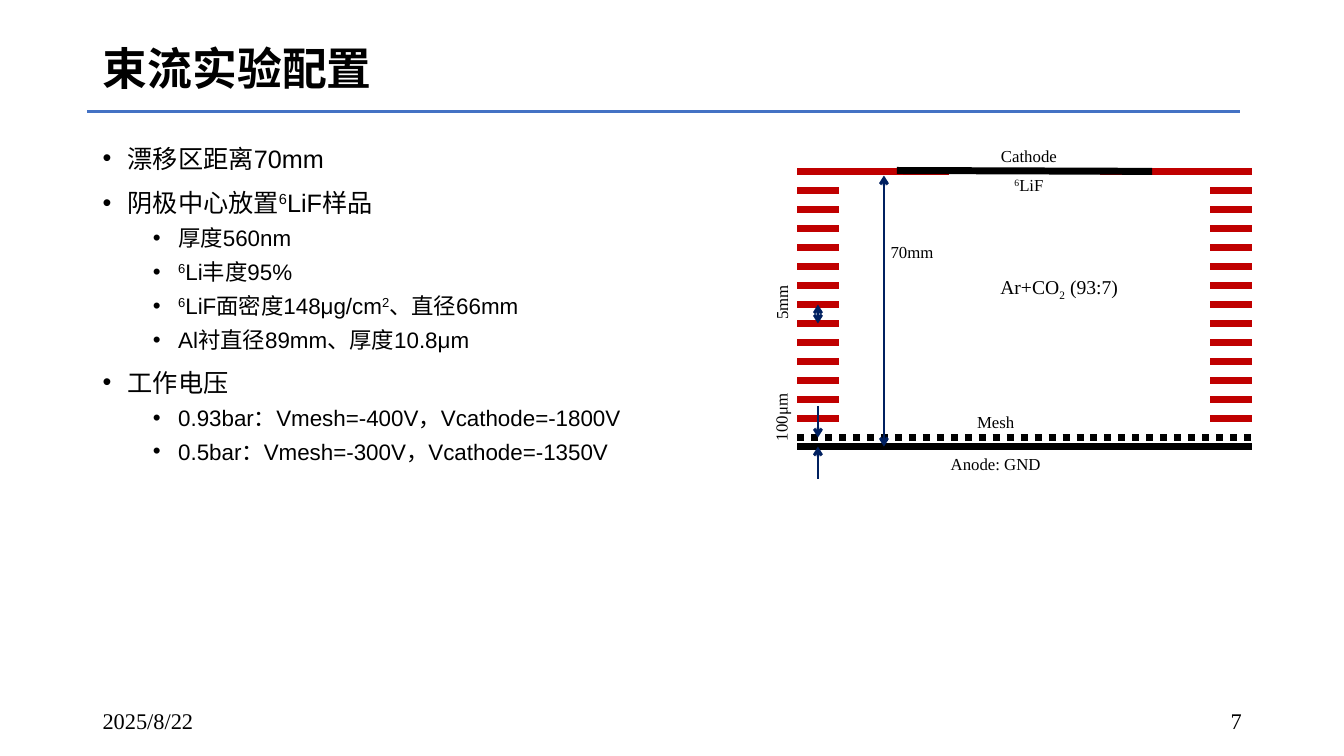
from pptx import Presentation
from pptx import util as u
from pptx.dml import color
from pptx.enum import dml, shapes, text
from pptx.oxml import ns, xmlchemy

Pt = u.Pt
BLACK = color.RGBColor(0x00, 0x00, 0x00)
BLUE = color.RGBColor(0x44, 0x72, 0xC4)
RED = color.RGBColor(0xC0, 0x00, 0x00)
NAVY = color.RGBColor(0x00, 0x20, 0x60)

SANS, SERIF, CJK = "Arial", "Times New Roman", "Noto Sans CJK JP"
LEFT, CENTER, RIGHT = text.PP_ALIGN.LEFT, text.PP_ALIGN.CENTER, text.PP_ALIGN.RIGHT
SUPER, SUB = 30000, -25000

BULLETS = [
    (0, ["漂移区距离70mm"]),
    (0, ["阴极中心放置", ("6", SUPER), "LiF样品"]),
    (1, ["厚度560nm"]),
    (1, [("6", SUPER), "Li丰度95%"]),
    (1, [("6", SUPER), "LiF面密度148μg/cm", ("2", SUPER), "、直径66mm"]),
    (1, ["Al衬直径89mm、厚度10.8μm"]),
    (0, ["工作电压"]),
    (1, ["0.93bar：Vmesh=-400V，Vcathode=-1800V"]),
    (1, ["0.5bar：Vmesh=-300V，Vcathode=-1350V"]),
]
LEVELS = [dict(size=18, indent=18, before=10), dict(size=16, indent=54, before=5)]


def set_all(target, values):
    for name, value in values.items():
        setattr(target, name, value)


def add_runs(p, parts, font, size, bold=False):
    for part in parts:
        words, baseline = part if isinstance(part, tuple) else (part, 0)
        r = p.add_run()
        r.text = words
        set_all(r.font, dict(name=font, size=Pt(size), bold=bold))
        r.font.color.rgb = BLACK
        rPr = r._r.get_or_add_rPr()
        ea = xmlchemy.OxmlElement("a:ea")
        ea.set("typeface", font)
        rPr.append(ea)
        if baseline:
            rPr.set("baseline", str(baseline))


def add_label(parent, box, parts, size, align=CENTER, anchor=text.MSO_ANCHOR.TOP, rotation=0):
    sp = parent.add_textbox(*map(Pt, box))
    sp.rotation = rotation
    set_all(sp.text_frame, dict(word_wrap=True, vertical_anchor=anchor))
    p = sp.text_frame.paragraphs[0]
    p.alignment = align
    add_runs(p, parts, SERIF, size)


def add_line(parent, start, end, rgb, width, arrows=(), dash=None):
    line = parent.add_connector(shapes.MSO_CONNECTOR.STRAIGHT, *map(Pt, (*start, *end)))
    line.line.color.rgb = rgb
    set_all(line.line, dict(width=Pt(width), dash_style=dash))
    ln = line.line._get_or_add_ln()
    for tag in arrows:
        arrow = xmlchemy.OxmlElement(tag)
        arrow.set("type", "arrow")
        ln.append(arrow)
    line._element.spPr.append(xmlchemy.OxmlElement("a:effectLst"))


def add_heading(s, left, top, width, height):
    title = s.shapes.title
    set_all(title, dict(left=Pt(left), top=Pt(top), width=Pt(width), height=Pt(height)))
    tf = title.text_frame
    set_all(tf, dict(word_wrap=True, auto_size=text.MSO_AUTO_SIZE.NONE,
                     vertical_anchor=text.MSO_ANCHOR.MIDDLE))
    p = tf.paragraphs[0]
    set_all(p, dict(alignment=LEFT, line_spacing=0.9))
    add_runs(p, ["束流实验配置"], CJK, 32, bold=True)
    rule_y = top + height + 7.2
    add_line(s.shapes, (left - 4.2, rule_y), (left + 819.4, rule_y), BLUE, 2.25)


def add_bullets(s, left, top, width, height):
    tf = s.shapes.add_textbox(*map(Pt, (left, top, width, height))).text_frame
    tf.word_wrap = True
    for i, (level, parts) in enumerate(BULLETS):
        style = LEVELS[level]
        p = tf.paragraphs[0] if i == 0 else tf.add_paragraph()
        set_all(p, dict(level=level, space_before=Pt(style["before"] if i else 0)))
        pPr = p._p.get_or_add_pPr()
        pPr.set("marL", str(Pt(style["indent"])))
        pPr.set("indent", str(Pt(-18)))
        for tag, key, value in (("a:buFont", "typeface", SANS), ("a:buChar", "char", "•")):
            bullet = xmlchemy.OxmlElement(tag)
            bullet.set(key, value)
            pPr.append(bullet)
        add_runs(p, parts, SANS, style["size"])


def add_detector(s, left, top, width, height):
    group = s.shapes.add_group_shape().shapes
    right, anode = left + width, top + height
    mesh = anode - 6.5
    head, tail = "a:headEnd", "a:tailEnd"

    add_line(group, (left, anode), (right, anode), BLACK, 5)
    add_line(group, (left, mesh), (right, mesh), BLACK, 5, dash=dml.MSO_LINE.ROUND_DOT)

    ring_width, pitch = 29.7, 13.57
    rings = [top + 13.7 + i * pitch for i in range(13)]
    for y in rings:
        for x in (left, right - ring_width):
            add_line(group, (x, y), (x + ring_width, y), RED, 5)
    for x in (left, right - 108.2):
        add_line(group, (x, top), (x + 108.2, top), RED, 5)
    add_line(group, (left + 71.3, top - 0.6), (left + 253.5, top), BLACK, 5)

    gap_x, drift_x = left + ring_width / 2, left + 62
    add_line(group, (gap_x, anode + 23), (gap_x, anode), NAVY, 2, [tail])
    add_line(group, (gap_x, mesh - 22.5), (gap_x, mesh), NAVY, 2, [tail])
    add_line(group, (gap_x, rings[7]), (gap_x, rings[6]), NAVY, 2, [head, tail])
    add_line(group, (drift_x, anode), (drift_x, top + 3), NAVY, 2, [head, tail])

    for x, y, w, h, parts, size, rotation in (
        (92.9, 198, 97.9, 21.6, ["Anode: GND"], 12, 0),
        (92.9, 168.5, 97.9, 21.6, ["Mesh"], 12, 0),
        (86.4, -21.6, 158.4, 21.6, ["Cathode"], 12, 0),
        (86.4, -1.2, 158.4, 21.6, [("6", SUPER), "LiF"], 12, 0),
        (51.8, 46.8, 60.5, 21.6, ["70mm"], 12, 0),
        (108, 70.6, 158.4, 24.5, ["Ar+CO", ("2", SUB), " (93:7)"], 14, 0),
        (-51.8, 164.9, 80.6, 21.6, ["100μm"], 12, 270),
        (-50.4, 82.8, 78.5, 21.6, ["5mm"], 12, 270),
    ):
        add_label(group, (left + x, top + y, w, h), parts, size, rotation=rotation)


def add_footer(s, left, top, width, height):
    middle = text.MSO_ANCHOR.MIDDLE
    add_label(s.shapes, (left, top, 216, height), ["2025/8/22"], 16, LEFT, middle)
    add_label(s.shapes, (left + width - 216, top, 216, height), ["7"], 16, RIGHT, middle)


def main():
    prs = Presentation()
    set_all(prs, dict(slide_width=Pt(960), slide_height=Pt(540)))
    s = prs.slides.add_slide(prs.slide_layouts[5])
    add_heading(s, 66.2, 28.8, 828, 43.9)
    add_bullets(s, 66.2, 98.6, 480, 379.4)
    add_detector(s, 569.4, 122.4, 324.8, 196.6)
    add_footer(s, 66.2, 500.4, 828, 28.8)
    prs.save("out.pptx")


if __name__ == "__main__":
    main()
